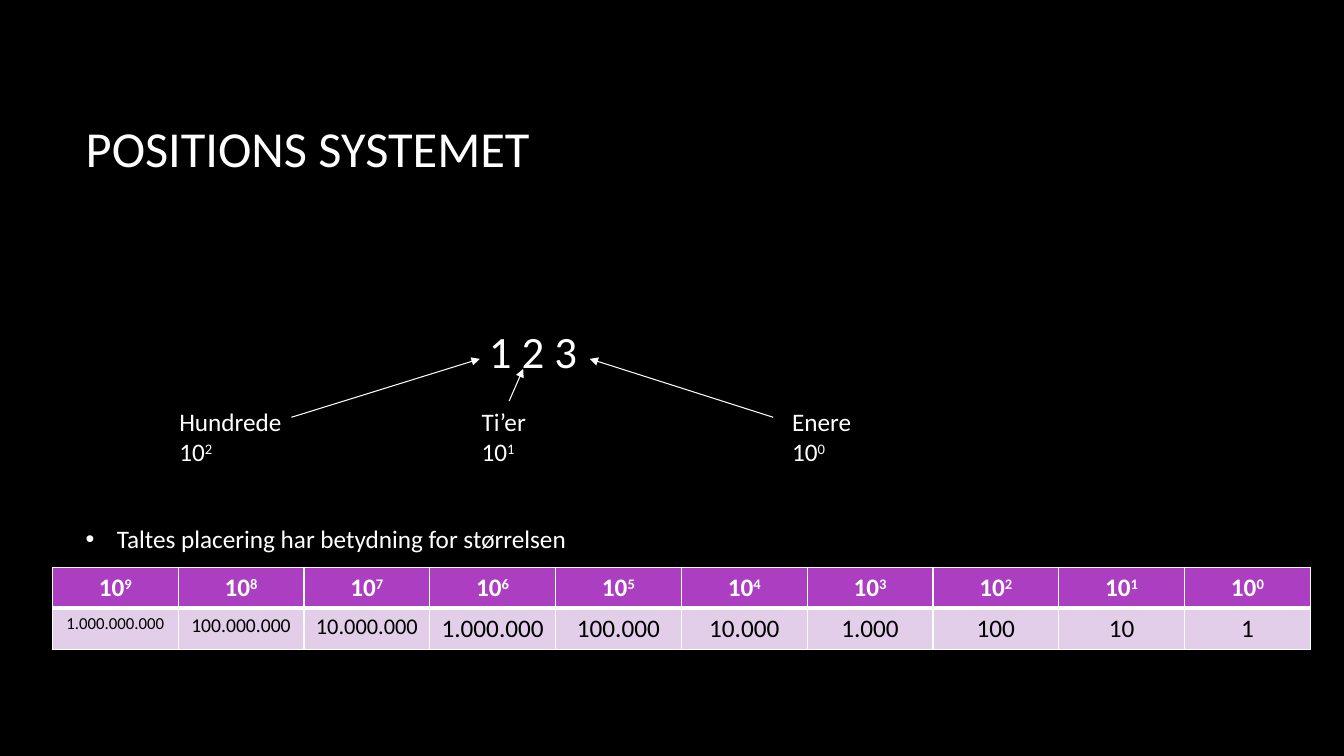
"""Build a slide about the decimal place-value system."""
from dataclasses import dataclass

from lxml import etree
from pptx import Presentation
from pptx.dml.color import RGBColor
from pptx.enum.shapes import MSO_CONNECTOR
from pptx.enum.text import MSO_ANCHOR, MSO_AUTO_SIZE, PP_ALIGN
from pptx.oxml.ns import qn
from pptx.slide import Slide
from pptx.table import _Cell
from pptx.text.text import TextFrame, _Paragraph
from pptx.util import Emu, Inches, Pt

STRAIGHT = MSO_CONNECTOR.STRAIGHT
TOP, MIDDLE = MSO_ANCHOR.TOP, MSO_ANCHOR.MIDDLE
GROW = MSO_AUTO_SIZE.SHAPE_TO_FIT_TEXT
LEFT, CENTER = PP_ALIGN.LEFT, PP_ALIGN.CENTER

WIDTH, HEIGHT = Inches(13.33), Inches(7.5)
FONT = "Calibri"
BLACK, WHITE, PURPLE, LILAC = "000000", "FFFFFF", "AC3EC1", "E3CEE9"
THIN, THICK = 1, 3


@dataclass(frozen=True)
class Area:
    """A rectangle in percent of the slide's width and height."""

    left: float
    top: float
    width: float
    height: float

    def lengths(self) -> tuple[Emu, Emu, Emu, Emu]:
        """Return the rectangle as slide lengths."""
        return across(self.left), down(self.top), across(self.width), down(self.height)


@dataclass(frozen=True)
class Place:
    """A digit's place: its name, power of ten and arrow to the digit."""

    name: str
    power: int
    left: float
    start: tuple[float, float]
    end: tuple[float, float]


TITLE = Area(5.63, 8.93, 83.1, 21.2)
NUMBER = Area(35.63, 42.4, 10, 8)
REMARK = Area(5.63, 68.2, 83.1, 6)
TABLE = Area(3.9, 75.07, 93.6, 10.8)
LABEL_TOP, LABEL_WIDTH, LABEL_HEIGHT = 53.07, 13.3, 9.47
PLACES = (
    Place("Enere", 0, 58.2, (57.53, 55.2), (43.88, 47.47)),
    Place("Ti’er", 1, 35.1, (37.88, 53.07), (38.93, 48.8)),
    Place("Hundrede", 2, 12.6, (21.68, 55.2), (35.7, 47.47)),
)
POWERS = range(9, -1, -1)


def across(percent: float) -> Emu:
    """Convert a percentage of the slide's width."""
    return Emu(round(WIDTH * percent / 100))


def down(percent: float) -> Emu:
    """Convert a percentage of the slide's height."""
    return Emu(round(HEIGHT * percent / 100))


def color(code: str) -> RGBColor:
    """Turn a hex string into a colour."""
    return RGBColor.from_string(code)


def add_bullet(para: _Paragraph) -> None:
    """Give a paragraph a round bullet with a hanging indent."""
    properties = para._p.get_or_add_pPr()
    indent = Inches(0.31)
    properties.set("marL", str(indent))
    properties.set("indent", str(-indent))
    etree.SubElement(properties, qn("a:buFont")).set("typeface", "Arial")
    etree.SubElement(properties, qn("a:buChar")).set("char", "•")


def write(frame: TextFrame, text: str, *, size: float = 18, ink: str = WHITE,
          bold: bool = False, align: PP_ALIGN = LEFT, bullet: bool = False) -> None:
    """Write lines of text, raising whatever follows a caret."""
    for index, line in enumerate(text.split("\n")):
        para = frame.add_paragraph() if index else frame.paragraphs[0]
        para.alignment = align
        if bullet:
            add_bullet(para)
        base, _, exponent = line.partition("^")
        for part, raised in ((base, False), (exponent, True)):
            if not part:
                continue
            span = para.add_run()
            span.text = part
            span.font.name = FONT
            span.font.size = Pt(size)
            span.font.bold = bold
            span.font.color.rgb = color(ink)
            if raised:
                span._r.get_or_add_rPr().set("baseline", "30000")


def add_text(page: Slide, area: Area, text: str, *, anchor: MSO_ANCHOR = TOP,
             grow: bool = False, size: float = 18, bullet: bool = False) -> None:
    """Add a wrapped text box."""
    frame = page.shapes.add_textbox(*area.lengths()).text_frame
    frame.word_wrap = True
    frame.vertical_anchor = anchor
    if grow:
        frame.auto_size = GROW
    write(frame, text, size=size, bullet=bullet)


def add_title(page: Slide, text: str) -> None:
    """Place and format the title."""
    title = page.shapes.title
    title.left, title.top, title.width, title.height = TITLE.lengths()
    title.text_frame.vertical_anchor = MIDDLE
    write(title.text_frame, text, size=36)


def add_arrow(page: Slide, start: tuple[float, float], end: tuple[float, float]) -> None:
    """Draw a thin arrow between two points."""
    arrow = page.shapes.add_connector(
        STRAIGHT, across(start[0]), down(start[1]), across(end[0]), down(end[1]))
    arrow.line.color.rgb = color(WHITE)
    arrow.line.width = Pt(0.75)
    etree.SubElement(arrow.line._get_or_add_ln(), qn("a:tailEnd")).set("type", "triangle")
    etree.SubElement(arrow._element.spPr, qn("a:effectLst"))


def add_place(page: Slide, place: Place) -> None:
    """Label one place and point to its digit."""
    area = Area(place.left, LABEL_TOP, LABEL_WIDTH, LABEL_HEIGHT)
    add_text(page, area, f"{place.name}\n10^{place.power}", grow=True)
    add_arrow(page, place.start, place.end)


def format_cell(cell: _Cell, fill: str, top: float, bottom: float) -> None:
    """Set a cell's white borders and its fill."""
    properties = cell._tc.get_or_add_tcPr()
    for side, width in (("L", THIN), ("R", THIN), ("T", top), ("B", bottom)):
        border = etree.SubElement(properties, qn(f"a:ln{side}"), w=str(Pt(width)))
        paint = etree.SubElement(border, qn("a:solidFill"))
        etree.SubElement(paint, qn("a:srgbClr")).set("val", WHITE)
    cell.fill.solid()
    cell.fill.fore_color.rgb = color(fill)


def add_power_table(page: Slide) -> None:
    """Add the table of powers of ten and their values."""
    table = page.shapes.add_table(2, len(POWERS), *TABLE.lengths()).table
    for column, power in enumerate(POWERS):
        header, value = table.cell(0, column), table.cell(1, column)
        format_cell(header, PURPLE, THIN, THICK)
        format_cell(value, LILAC, THICK, THIN)
        write(header.text_frame, f"10^{power}", bold=True, align=CENTER)
        write(value.text_frame, f"{10 ** power:,}".replace(",", "."),
              size=min(18, 12 + 2 * column), ink=BLACK, align=CENTER)


def main() -> None:
    """Build and save the deck."""
    deck = Presentation()
    deck.slide_width, deck.slide_height = WIDTH, HEIGHT
    page = deck.slides.add_slide(deck.slide_layouts.get_by_name("Title Only"))
    page.background.fill.solid()
    page.background.fill.fore_color.rgb = color(BLACK)
    add_title(page, "POSITIONS SYSTEMET")
    add_text(page, NUMBER, "1 2 3", anchor=MIDDLE, size=32)
    add_text(page, REMARK, "Taltes placering har betydning for størrelsen",
             anchor=MIDDLE, bullet=True)
    for place in PLACES:
        add_place(page, place)
    add_power_table(page)
    deck.save("out.pptx")


if __name__ == "__main__":
    main()
